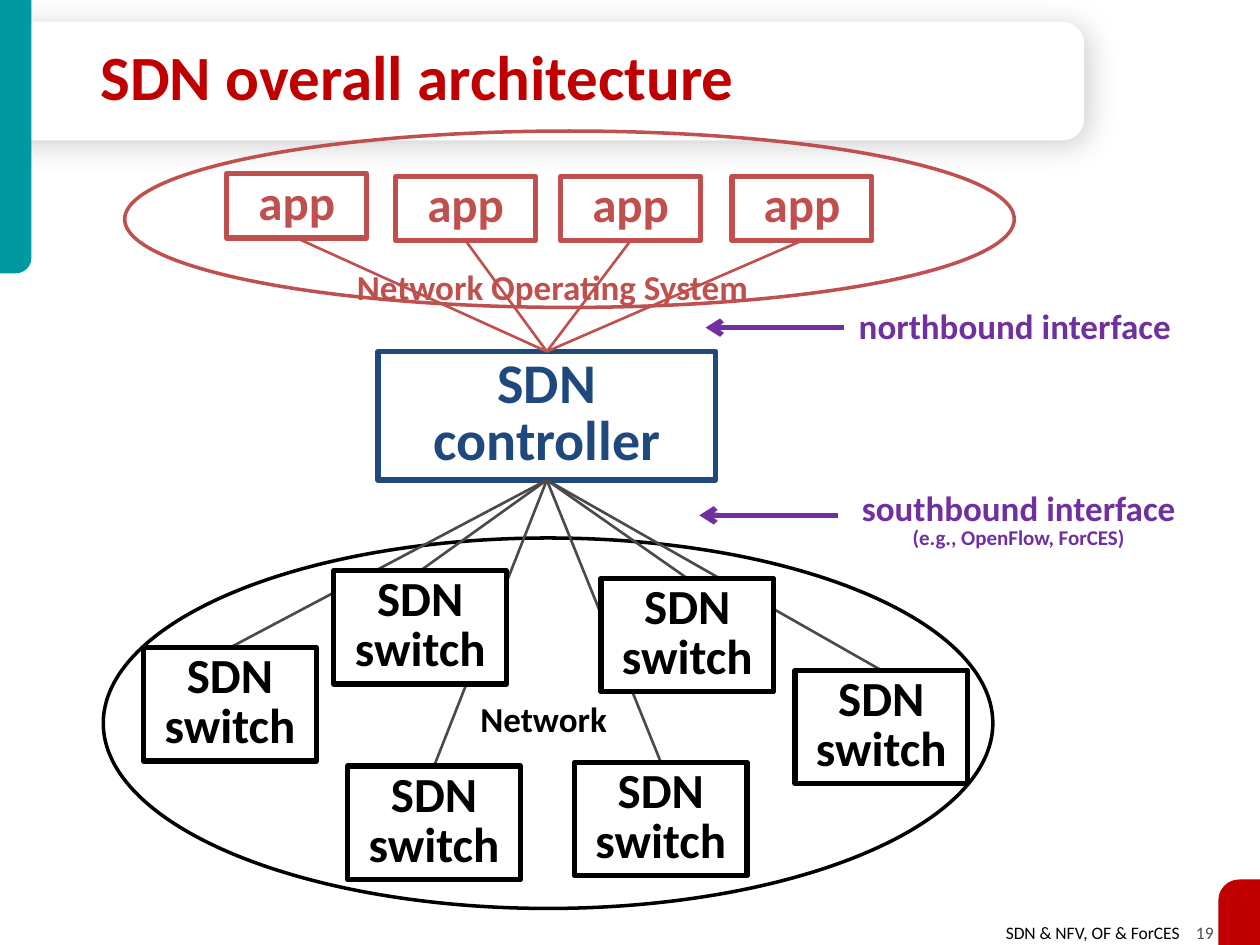
from dataclasses import dataclass
from typing import Optional

from lxml import etree
from pptx import Presentation
from pptx import util as u
from pptx.dml.color import RGBColor
from pptx.enum import shapes, text
from pptx.oxml.ns import qn

HUES = {
    "white": "FFFFFF",
    "black": "000000",
    "teal": "0098A1",
    "red": "C00000",
    "app": "C0504D",
    "core": "1F497D",
    "link": "4D4948",
    "note": "7030A0",
    "page": "4D4D4D",
}
KIND = shapes.MSO_SHAPE
MID = text.PP_ALIGN.CENTER
END = text.PP_ALIGN.RIGHT
TOP, BASE = 0, 2


@dataclass
class Box:
    left: float
    top: float
    width: float
    height: float
    words: str = ""
    size: float = 20
    hue: str = "black"
    fill: Optional[str] = None
    edge: float = 0
    kind: KIND = KIND.RECTANGLE


@dataclass
class Label:
    left: float
    top: float
    width: float
    height: float
    lines: tuple
    hue: str
    align: text.PP_ALIGN = MID
    bold: bool = True
    space: float = 0.85
    anchor: text.MSO_ANCHOR = text.MSO_ANCHOR.TOP


def tint(name: str) -> RGBColor:
    return RGBColor.from_string(HUES[name])


def style(para, size: float, hue: str, align, bold=True, space=0.85) -> None:
    para.alignment = align
    para.line_spacing = space
    para.font.name = "Calibri"
    para.font.size = u.Pt(size)
    para.font.bold = bold
    para.font.color.rgb = tint(hue)


def draw_box(slide, box: Box):
    spot = [u.Inches(n) for n in (box.left, box.top, box.width, box.height)]
    shape = slide.shapes.add_shape(box.kind, *spot)
    shape.shadow.inherit = False
    if box.fill:
        shape.fill.solid()
        shape.fill.fore_color.rgb = tint(box.fill)
    else:
        shape.fill.background()
    if box.edge:
        shape.line.color.rgb = tint(box.hue)
        shape.line.width = u.Pt(box.edge)
    else:
        shape.line.fill.background()
    if box.words:
        frame = shape.text_frame
        frame.word_wrap = True
        frame.vertical_anchor = text.MSO_ANCHOR.TOP
        frame.text = box.words
        style(frame.paragraphs[0], box.size, box.hue, MID)
    return shape


def draw_label(slide, label: Label) -> None:
    spot = [u.Inches(n) for n in (label.left, label.top, label.width, label.height)]
    frame = slide.shapes.add_textbox(*spot).text_frame
    frame.word_wrap = True
    frame.vertical_anchor = label.anchor
    frame.text = "\n".join(words for words, _ in label.lines)
    for para, (_, size) in zip(frame.paragraphs, label.lines):
        style(para, size, label.hue, label.align, label.bold, label.space)


def draw_line(slide, start: tuple, stop: tuple, hue: str, width: float = 1.5):
    ends = [u.Inches(n) for n in (*start, *stop)]
    line = slide.shapes.add_connector(shapes.MSO_CONNECTOR.STRAIGHT, *ends)
    line.line.color.rgb = tint(hue)
    line.line.width = u.Pt(width)
    etree.SubElement(line._element.spPr, qn("a:effectLst"))
    return line


def draw_arrow(slide, right: float, top: float) -> None:
    line = draw_line(slide, (right, top), (right - 1.1, top), "note", 3)
    ln = line._element.spPr.find(qn("a:ln"))
    etree.SubElement(ln, qn("a:tailEnd"), type="arrow")


def add_shade(shape) -> None:
    effects = shape._element.spPr.find(qn("a:effectLst"))
    shade = etree.SubElement(
        effects, qn("a:outerShdw"), blurRad=str(u.Pt(17)), dist=str(u.Pt(3)),
        dir="2700000", algn="tl", rotWithShape="0")
    color = etree.SubElement(shade, qn("a:srgbClr"), val=HUES["black"])
    etree.SubElement(color, qn("a:alpha"), val="19000")


def draw_frame(slide) -> None:
    draw_label(slide, Label(7.6, 7.27, 1.86, 0.27, (("SDN & NFV, OF & ForCES", 10),),
                            "black", END, False, 1))
    draw_label(slide, Label(9.3, 7.27, 0.43, 0.27, (("19", 10),), "page", END, False, 1))
    panel = draw_box(slide, Box(3.83, -3.66, 0.94, 8.61, fill="white",
                                kind=KIND.ROUND_2_SAME_RECTANGLE))
    panel.rotation = 90
    panel.adjustments[0] = 0.184
    add_shade(panel)
    tabs = (
        (Box(0, 0, 0.25, 2.17, fill="teal", kind=KIND.ROUND_1_RECTANGLE), "flipV"),
        (Box(9.67, 6.98, 0.33, 0.52, fill="red", kind=KIND.ROUND_1_RECTANGLE), "flipH"),
    )
    for box, flip in tabs:
        tab = draw_box(slide, box)
        tab.adjustments[0] = 0.5
        tab._element.spPr.find(qn("a:xfrm")).set(flip, "1")
    draw_label(slide, Label(0.7, 0.29, 7.4, 0.71, (("SDN overall architecture", 36),), "red",
                            text.PP_ALIGN.LEFT, anchor=text.MSO_ANCHOR.MIDDLE))


def draw_net(slide) -> None:
    draw_box(slide, Box(3.4, 5.54, 1.83, 0.39, "Network", fill="white"))
    core = draw_box(slide, Box(3, 2.79, 2.68, 1.02, "SDN controller", 32, "core", edge=3))
    apps = [draw_box(slide, Box(left, top, 1.11, 0.51, "app", 28, "app", edge=3))
            for left, top in ((1.8, 1.38), (3.14, 1.4), (4.45, 1.4), (5.81, 1.4))]
    draw_box(slide, Box(0.99, 1.04, 7.06, 1.4, hue="app", edge=2, kind=KIND.OVAL))
    draw_label(slide, Label(2.61, 2.11, 3.55, 0.39, (("Network Operating System", 20),), "app"))
    draw_box(slide, Box(0.82, 4.27, 7.06, 2.94, edge=2, kind=KIND.OVAL))

    spots = ((1.14, 5.14), (2.76, 6.08), (2.65, 4.53), (4.56, 6.05), (6.31, 5.32), (4.77, 4.59))
    links = [draw_line(slide, (4.34, 3.81), spot, "link") for spot in spots]
    for link, (left, top) in zip(links, spots):
        node = draw_box(slide, Box(left, top, 1.37, 0.9, "SDN switch", 28, fill="white", edge=3))
        link.begin_connect(core, BASE)
        link.end_connect(node, TOP)
    for app in apps:
        link = draw_line(slide, (0, 0), (4.34, 2.79), "app")
        link.begin_connect(app, BASE)
        link.end_connect(core, TOP)


def draw_notes(slide) -> None:
    draw_label(slide, Label(6.53, 3.86, 3.11, 0.56, (
        ("southbound interface", 20), ("(e.g., OpenFlow, ForCES)", 12)), "note"))
    draw_arrow(slide, 6.65, 4.09)
    draw_arrow(slide, 6.7, 2.6)
    draw_label(slide, Label(6.57, 2.42, 2.97, 0.39, (("northbound interface", 20),), "note"))


def main() -> None:
    deck = Presentation()
    deck.slide_width = u.Inches(10)
    deck.slide_height = u.Inches(7.5)
    slide = deck.slides.add_slide(deck.slide_layouts[6])
    draw_frame(slide)
    draw_net(slide)
    draw_notes(slide)
    deck.save("out.pptx")


if __name__ == "__main__":
    main()
